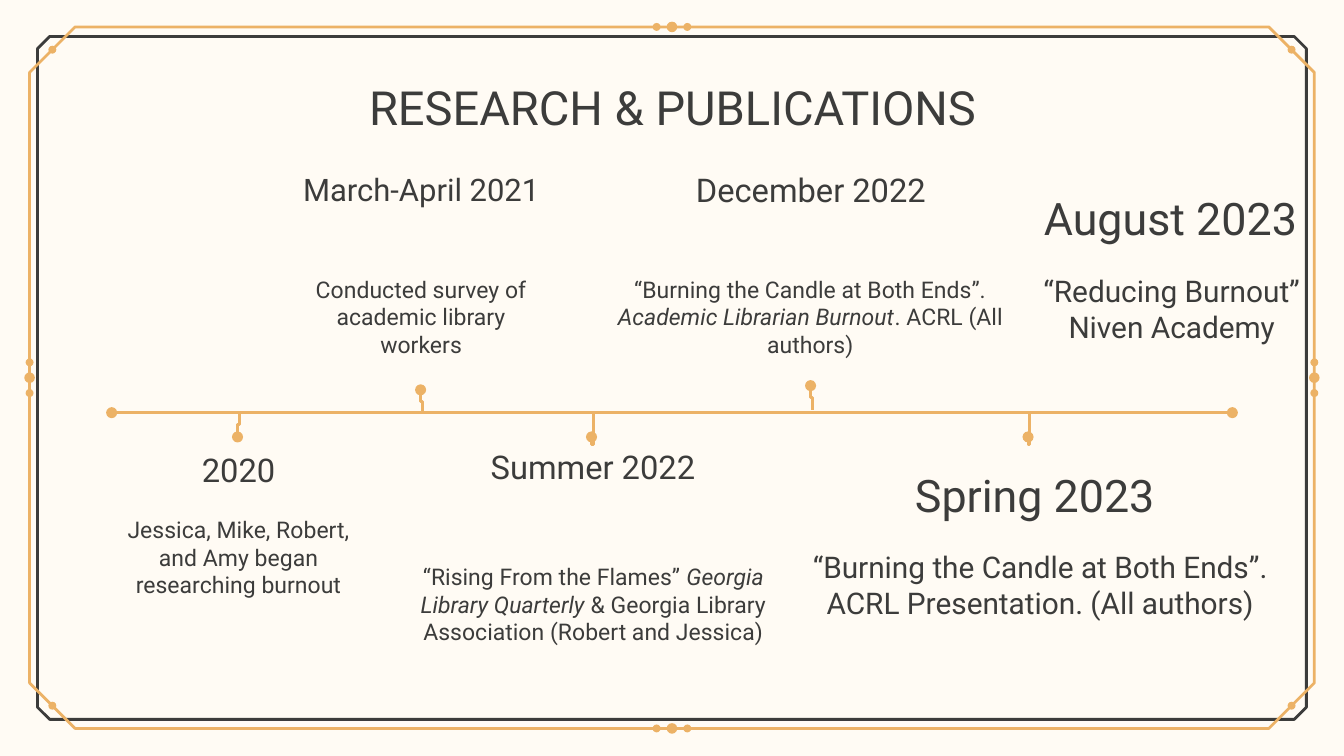
from dataclasses import dataclass

from lxml.etree import SubElement
from pptx import Presentation
from pptx.dml.color import RGBColor
from pptx.enum.shapes import MSO_CONNECTOR, MSO_SHAPE
from pptx.enum.text import MSO_ANCHOR, MSO_AUTO_SIZE, PP_ALIGN
from pptx.oxml.ns import qn
from pptx.util import Cm, Pt


@dataclass(frozen=True)
class Theme:
    background: RGBColor = RGBColor.from_string("FFFBF4")
    ink: RGBColor = RGBColor.from_string("3C3C3B")
    gold: RGBColor = RGBColor.from_string("ECB266")
    font: str = "Roboto"
    title: float = 25.2
    heading: float = 17.5
    survey_heading: float = 16.6
    large_heading: float = 24
    detail: float = 12.3
    large_detail: float = 16
    line: float = 1.5


@dataclass(frozen=True)
class Box:
    """A rectangle in centimetres."""
    left: float
    top: float
    width: float
    height: float

    def lengths(self):
        return Cm(self.left), Cm(self.top), Cm(self.width), Cm(self.height)


@dataclass(frozen=True)
class Event:
    heading: str
    heading_size: float
    box: Box
    paragraphs: tuple  # text between asterisks is italic
    detail_size: float
    detail_shift: tuple  # right and down from the heading
    detail_width: float


THEME = Theme()
SLIDE_WIDTH, SLIDE_HEIGHT = 25.4, 14.29
DETAIL_HEIGHT = 2.13

TITLE_BOX = Box(2.01, 1.24, 21.41, 1.6)
GOLD_FRAME = Box(0.56, 0.51, 24.28, 13.26)
DARK_FRAME = Box(0.71, 0.69, 23.98, 12.91)
AXIS = Box(2.11, 7.8, 21.18, 0)

# Dot across, dot down, bend down and end down, all from the axis start
TICKS = [
    (2.38, 0.46, 0.23, 0.02),
    (5.84, -0.43, -0.21, 0),
    (9.07, 0.46, 0.61, 0),
    (13.21, -0.51, -0.28, -0.05),
    (17.32, 0.46, 0.61, 0),
]

EVENTS = [
    Event("2020", THEME.heading, Box(2.01, 8.25, 5, 1.25),
          ("Jessica, Mike, Robert, and Amy began researching burnout",),
          THEME.detail, (0, 1.25), 5),
    Event("March-April 2021", THEME.survey_heading, Box(5.46, 2.97, 5, 1.25),
          ("Conducted survey of academic library workers",),
          THEME.detail, (0, 1.98), 5),
    Event("Summer 2022", THEME.heading, Box(8.71, 8.2, 5, 1.25),
          ("“Rising From the Flames” *Georgia Library Quarterly *"
           "& Georgia Library Association (Robert and Jessica)",),
          THEME.detail, (-1.32, 2.19), 7.65),
    Event("December 2022", THEME.heading, Box(12.83, 2.97, 5, 1.25),
          ("“Burning the Candle at Both Ends”. "
           "*Academic Librarian Burnout*. ACRL (All authors)",),
          THEME.detail, (-2.01, 1.98), 8.99),
    Event("Spring 2023", THEME.large_heading, Box(15.39, 8.59, 8.33, 1.52),
          ("“Burning the Candle at Both Ends”. "
           "ACRL Presentation. (All authors)",),
          THEME.large_detail, (-0.43, 1.54), 9.4),
    Event("August 2023", THEME.large_heading, Box(19.15, 3.35, 5.94, 1.52),
          ("“Reducing Burnout”", "Niven Academy"),
          THEME.large_detail, (0.15, 1.55), 5.69),
]


def write_text(shape, paragraphs, size):
    text_frame = shape.text_frame
    text_frame.word_wrap = True
    text_frame.auto_size = MSO_AUTO_SIZE.NONE
    text_frame.vertical_anchor = MSO_ANCHOR.TOP
    text_frame.margin_left = text_frame.margin_right = Cm(0.25)
    text_frame.margin_top = text_frame.margin_bottom = Cm(0.25)
    for index, text in enumerate(paragraphs):
        paragraph = text_frame.add_paragraph() if index else text_frame.paragraphs[0]
        paragraph.alignment = PP_ALIGN.CENTER
        for part, words in enumerate(text.split("*")):
            run = paragraph.add_run()
            run.text = words
            run.font.name = THEME.font
            run.font.size = Pt(size)
            run.font.bold = False
            run.font.italic = part % 2 == 1
            run.font.color.rgb = THEME.ink


def style_line(shape, color, ovals=()):
    shape.line.color.rgb = color
    shape.line.width = Pt(THEME.line)
    for end in ovals:
        SubElement(shape.line._ln, qn(f"a:{end}"), type="oval")


def add_outline(shapes, points, color, closed, ovals=()):
    corners = [(Cm(x), Cm(y)) for x, y in points]
    builder = shapes.build_freeform(*corners[0])
    builder.add_line_segments(corners[1:], close=closed)
    shape = builder.convert_to_shape()
    shape.shadow.inherit = False
    shape.fill.background()
    style_line(shape, color, ovals)


def add_dot(shapes, x, y, diameter):
    box = Box(x - diameter / 2, y - diameter / 2, diameter, diameter)
    dot = shapes.add_shape(MSO_SHAPE.OVAL, *box.lengths())
    dot.shadow.inherit = False
    dot.fill.solid()
    dot.fill.fore_color.rgb = THEME.gold
    dot.line.fill.background()


def add_cut_frame(shapes, box, cut, color):
    left, top = box.left, box.top
    right, bottom = left + box.width, top + box.height
    points = [
        (left + cut, top), (right - cut, top), (right, top + cut),
        (right, bottom - cut), (right - cut, bottom), (left + cut, bottom),
        (left, bottom - cut), (left, top + cut),
    ]
    add_outline(shapes, points, color, closed=True)


def add_border(slide, gold, dark):
    shapes = slide.shapes.add_group_shape().shapes
    cut = 0.86
    add_cut_frame(shapes, dark, 0.23, THEME.ink)
    add_cut_frame(shapes, gold, cut, THEME.gold)
    # Three dots in the middle of each side
    middle_x, middle_y = gold.left + gold.width / 2, gold.top + gold.height / 2
    for step, diameter in ((-0.29, 0.15), (0, 0.2), (0.29, 0.15)):
        for y in (gold.top, gold.top + gold.height):
            add_dot(shapes, middle_x + step, y, diameter)
        for x in (gold.left, gold.left + gold.width):
            add_dot(shapes, x, middle_y + step, diameter)
    # One dot on each cut corner
    for x in (gold.left + cut / 2, gold.left + gold.width - cut / 2):
        for y in (gold.top + cut / 2, gold.top + gold.height - cut / 2):
            add_dot(shapes, x, y, 0.15)


def add_title(slide, box, text):
    title = slide.shapes.title
    title.left, title.top, title.width, title.height = box.lengths()
    write_text(title, [text], THEME.title)


def add_timeline(slide, axis):
    y = Cm(axis.top)
    line = slide.shapes.add_connector(
        MSO_CONNECTOR.STRAIGHT, Cm(axis.left), y, Cm(axis.left + axis.width), y)
    style_line(line, THEME.gold, ("headEnd", "tailEnd"))
    SubElement(line._element.spPr, qn("a:effectLst"))
    # Stepped ticks, each with a dot at its free end
    for across, dot, bend, end in TICKS:
        x = axis.left + across
        steps = [(x, dot), (x, bend), (x + 0.03, bend), (x + 0.03, end)]
        points = [(step_x, axis.top + down) for step_x, down in steps]
        add_outline(slide.shapes, points, THEME.gold, closed=False, ovals=("headEnd",))


def add_event(slide, event):
    box = event.box
    right, down = event.detail_shift
    detail_box = Box(box.left + right, box.top + down, event.detail_width, DETAIL_HEIGHT)
    heading = slide.shapes.add_textbox(*box.lengths())
    write_text(heading, [event.heading], event.heading_size)
    detail = slide.shapes.add_textbox(*detail_box.lengths())
    write_text(detail, event.paragraphs, event.detail_size)


def main():
    presentation = Presentation()
    presentation.slide_width = Cm(SLIDE_WIDTH)
    presentation.slide_height = Cm(SLIDE_HEIGHT)
    slide = presentation.slides.add_slide(presentation.slide_layouts[5])
    slide.background.fill.solid()
    slide.background.fill.fore_color.rgb = THEME.background
    add_border(slide, GOLD_FRAME, DARK_FRAME)
    add_title(slide, TITLE_BOX, "RESEARCH & PUBLICATIONS")
    add_timeline(slide, AXIS)
    for event in EVENTS:
        add_event(slide, event)
    presentation.save("out.pptx")


if __name__ == "__main__":
    main()
